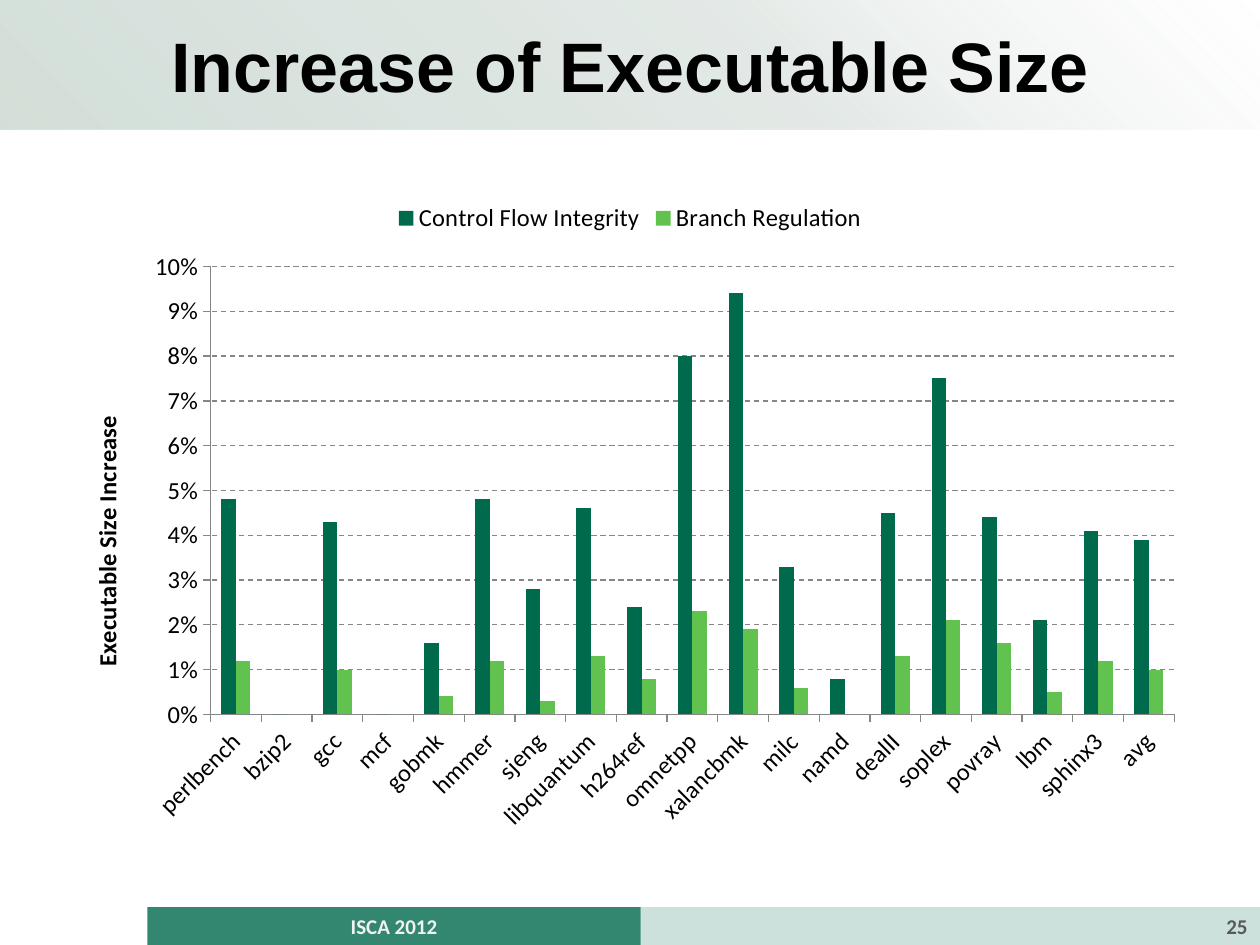
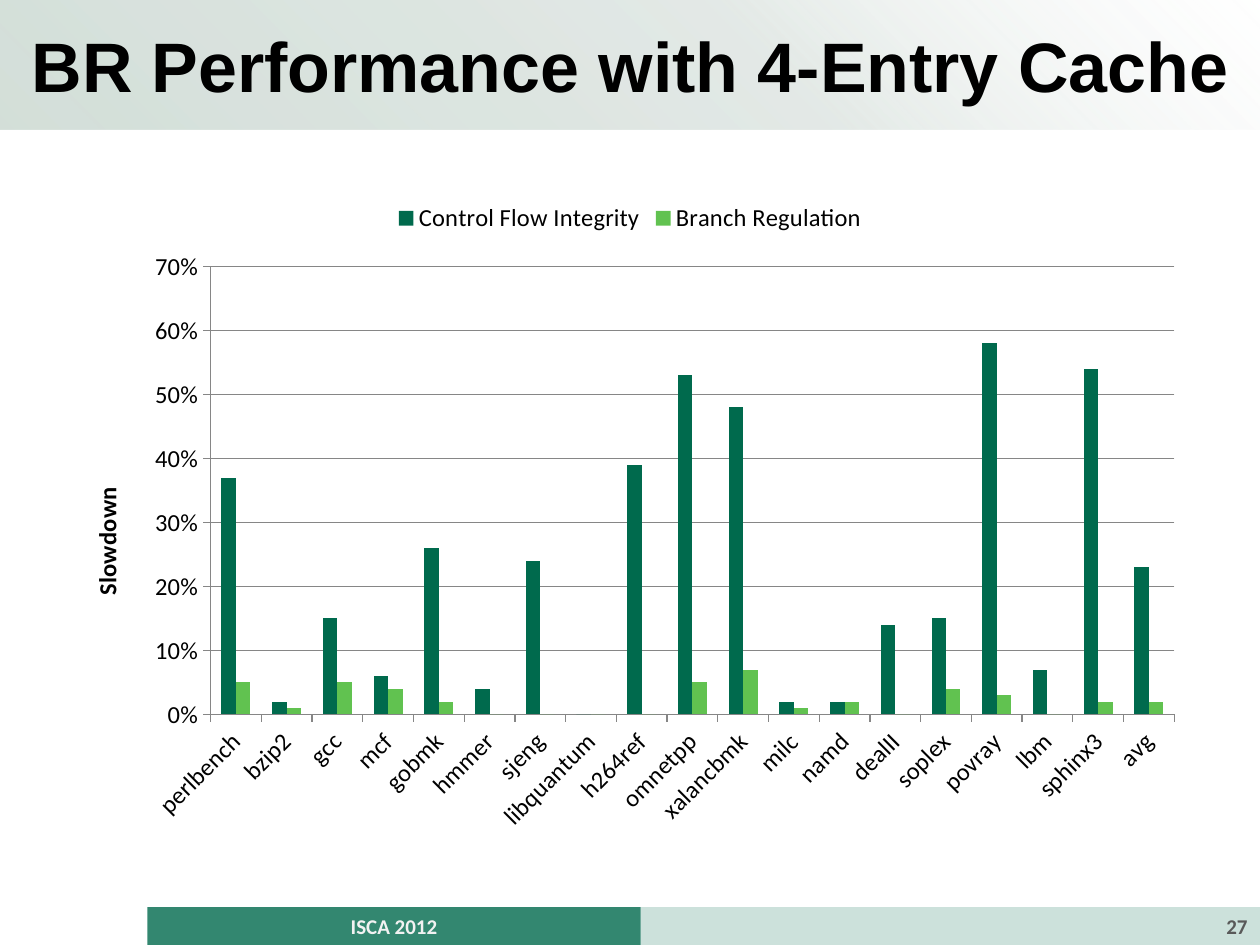
from typing import NamedTuple
from lxml.etree import SubElement
from pptx import Presentation
from pptx.chart.data import CategoryChartData
from pptx.dml.color import RGBColor
from pptx.enum.chart import XL_CHART_TYPE, XL_LEGEND_POSITION, XL_TICK_LABEL_POSITION, XL_TICK_MARK
from pptx.enum.dml import MSO_LINE
from pptx.enum.shapes import MSO_SHAPE
from pptx.enum.text import MSO_ANCHOR, MSO_AUTO_SIZE, PP_ALIGN
from pptx.oxml import parse_xml
from pptx.oxml.ns import nsdecls, qn
from pptx.util import Inches, Pt

WIDE, HIGH = Inches(10), Inches(7.5)
COLS, ROWS = 100, 75
GREEN, LIME, GREY, BLACK = "006A4D", "61C250", "868686", "000000"
HEAD, BODY = "Arial", "Calibri"
FADE = ((0, "9BB5A8", 44), (61, "C3D1CA", 45), (100, "E2E8E5", 0))
NAMES = ("perlbench bzip2 gcc mcf gobmk hmmer sjeng libquantum h264ref omnetpp "
         "xalancbmk milc namd dealII soplex povray lbm sphinx3 avg").split()


class Box(NamedTuple):
    left: float
    top: float
    wide: float
    high: float


class Band(NamedTuple):
    box: Box
    alpha: int
    ink: str
    align: PP_ALIGN


class Page(NamedTuple):
    title: str
    number: int
    axis: str
    top: float
    step: float
    dash: bool
    flow: tuple
    branch: tuple


TITLE = Box(0, 0, 100, 10.3)
CHART = Box(5, 15, 90, 52)
VENUE = Band(Box(11.7, 72, 39.15, 3), 80, "F2F2F2", PP_ALIGN.CENTER)
COUNT = Band(Box(50.85, 72, 49.15, 3), 20, "595959", PP_ALIGN.RIGHT)

PAGES = (
    Page("Increase of Executable Size", 25, "Executable Size Increase", 0.1, 0.01, True,
         (0.048, 0, 0.043, 0, 0.016, 0.048, 0.028, 0.046, 0.024, 0.08,
          0.094, 0.033, 0.008, 0.045, 0.075, 0.044, 0.021, 0.041, 0.039),
         (0.012, 0, 0.01, 0, 0.004, 0.012, 0.003, 0.013, 0.008, 0.023,
          0.019, 0.006, 0, 0.013, 0.021, 0.016, 0.005, 0.012, 0.01)),
    Page("BR Performance with 4-Entry Cache", 27, "Slowdown", 0.7, 0.1, False,
         (0.37, 0.02, 0.15, 0.06, 0.26, 0.04, 0.24, 0, 0.39, 0.53,
          0.48, 0.02, 0.02, 0.14, 0.15, 0.58, 0.07, 0.54, 0.23),
         (0.05, 0.01, 0.05, 0.04, 0.02, 0, 0, 0, 0, 0.05,
          0.07, 0.01, 0.02, 0, 0.04, 0.03, 0, 0.02, 0.02)),
)


def place(box: Box) -> tuple:
    return (int(WIDE * box.left / COLS), int(HIGH * box.top / ROWS),
            int(WIDE * box.wide / COLS), int(HIGH * box.high / ROWS))


def paint(fill, tint: str) -> None:
    fill.solid()
    fill.fore_color.rgb = RGBColor.from_string(tint)


def style(font, size: float = 14, face: str = BODY, ink: str = BLACK, bold: bool = False) -> None:
    font.size, font.name, font.bold = Pt(size), face, bold
    font.color.rgb = RGBColor.from_string(ink)


def write(frame, text: str, align: PP_ALIGN = PP_ALIGN.CENTER, **form) -> None:
    frame.text = text
    para = frame.paragraphs[0]
    para.alignment = align
    style(para.runs[0].font, **form)


def fade(shape) -> None:
    stops = "".join(
        f'<a:gs pos="{pos * 1000}"><a:srgbClr val="{tint}"><a:alpha val="{alpha * 1000}"/>'
        f'</a:srgbClr></a:gs>' for pos, tint, alpha in FADE)
    grad = parse_xml(
        f'<a:gradFill {nsdecls("a")} rotWithShape="1"><a:gsLst>{stops}</a:gsLst>'
        '<a:path path="circle"><a:fillToRect t="100000" r="100000"/></a:path></a:gradFill>')
    shape.fill.background()
    old = shape._element.spPr.find(qn("a:noFill"))
    old.getparent().replace(old, grad)


def head(slide, text: str) -> None:
    shape = slide.shapes.title
    shape.left, shape.top, shape.width, shape.height = place(TITLE)
    fade(shape)
    frame = shape.text_frame
    frame.auto_size = MSO_AUTO_SIZE.NONE
    frame.vertical_anchor = MSO_ANCHOR.MIDDLE
    write(frame, text, size=40, face=HEAD, bold=True)


def foot(slide, band: Band, text: str) -> None:
    shape = slide.shapes.add_shape(MSO_SHAPE.RECTANGLE, *place(band.box))
    shape.shadow.inherit = False
    paint(shape.fill, GREEN)
    tint = shape._element.spPr.find(qn("a:solidFill"))[0]
    SubElement(tint, qn("a:alpha")).set("val", str(band.alpha * 1000))
    shape.line.fill.background()
    shape.text_frame.vertical_anchor = MSO_ANCHOR.MIDDLE
    write(shape.text_frame, text, band.align, size=12, ink=band.ink, bold=True)


def plot(slide, page: Page) -> None:
    data = CategoryChartData(number_format="0%")
    data.categories = NAMES
    data.add_series("Control Flow Integrity", page.flow)
    data.add_series("Branch Regulation", page.branch)
    chart = slide.shapes.add_chart(XL_CHART_TYPE.COLUMN_CLUSTERED, *place(CHART), data).chart
    style(chart.font, size=10)
    chart.has_title = False
    chart.has_legend = True
    chart.legend.position = XL_LEGEND_POSITION.TOP
    chart.legend.include_in_layout = False
    style(chart.legend.font)

    bars = chart.plots[0]
    bars.gap_width, bars.overlap, bars.vary_by_categories = 150, 0, False
    for row, tint in zip(bars.series, (GREEN, LIME)):
        paint(row.format.fill, tint)
        row.invert_if_negative = False

    base, side = chart.category_axis, chart.value_axis
    for axis in (base, side):
        axis.major_tick_mark = XL_TICK_MARK.OUTSIDE
        axis.minor_tick_mark = XL_TICK_MARK.NONE
        paint(axis.format.line.fill, GREY)
        style(axis.tick_labels.font)
    base.has_major_gridlines = False
    base.tick_label_position = XL_TICK_LABEL_POSITION.LOW
    base._element.find(qn("c:txPr")).find(qn("a:bodyPr")).set("rot", "-2700000")

    side.minimum_scale, side.maximum_scale, side.major_unit = 0, page.top, page.step
    side.tick_labels.number_format = "0%"
    side.tick_labels.number_format_is_linked = False
    side.has_major_gridlines = True
    line = side.major_gridlines.format.line
    paint(line.fill, GREY)
    if page.dash:
        line.dash_style = MSO_LINE.DASH
    frame = side.axis_title.text_frame
    write(frame, page.axis, bold=True)
    frame._txBody.find(qn("a:bodyPr")).set("rot", "-5400000")


def main() -> None:
    deck = Presentation()
    deck.slide_width, deck.slide_height = WIDE, HIGH
    for page in PAGES:
        slide = deck.slides.add_slide(deck.slide_layouts[5])
        paint(slide.background.fill, "FFFFFF")
        head(slide, page.title)
        plot(slide, page)
        foot(slide, VENUE, "ISCA 2012")
        foot(slide, COUNT, str(page.number))
    deck.save("out.pptx")


if __name__ == "__main__":
    main()
